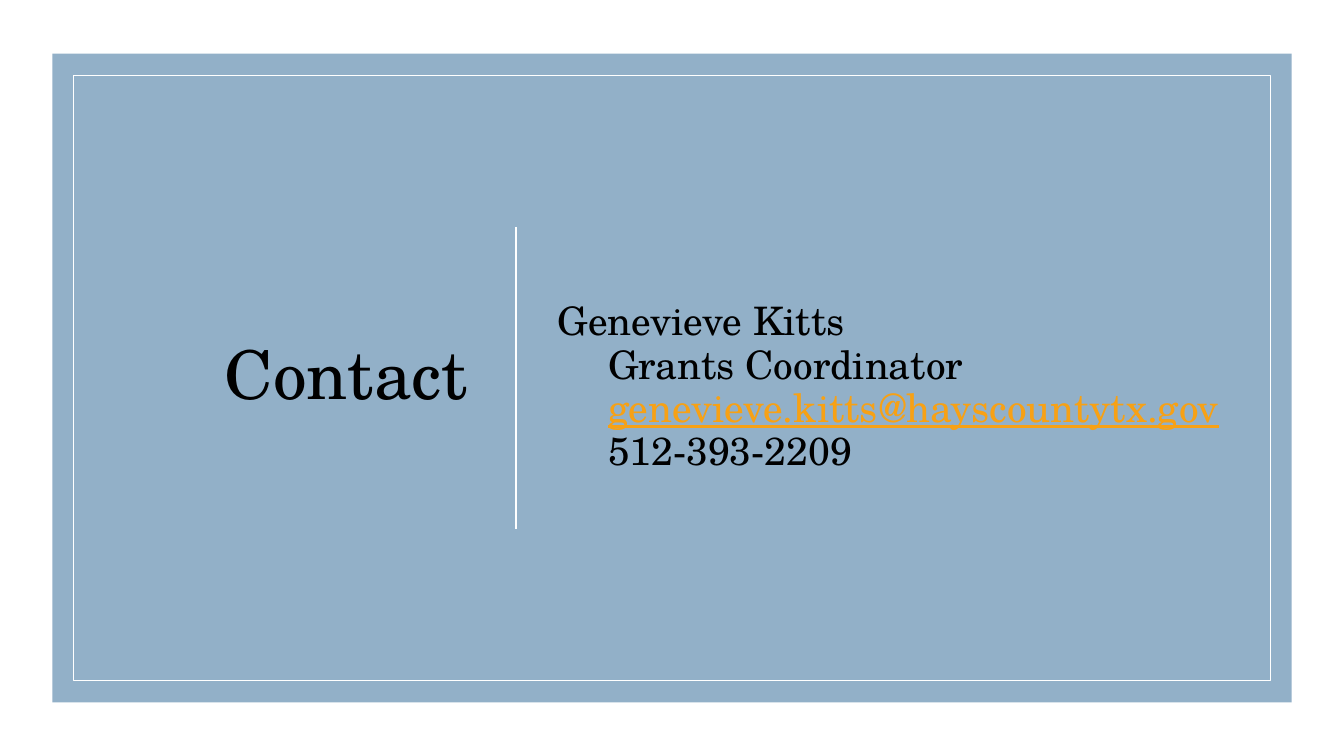
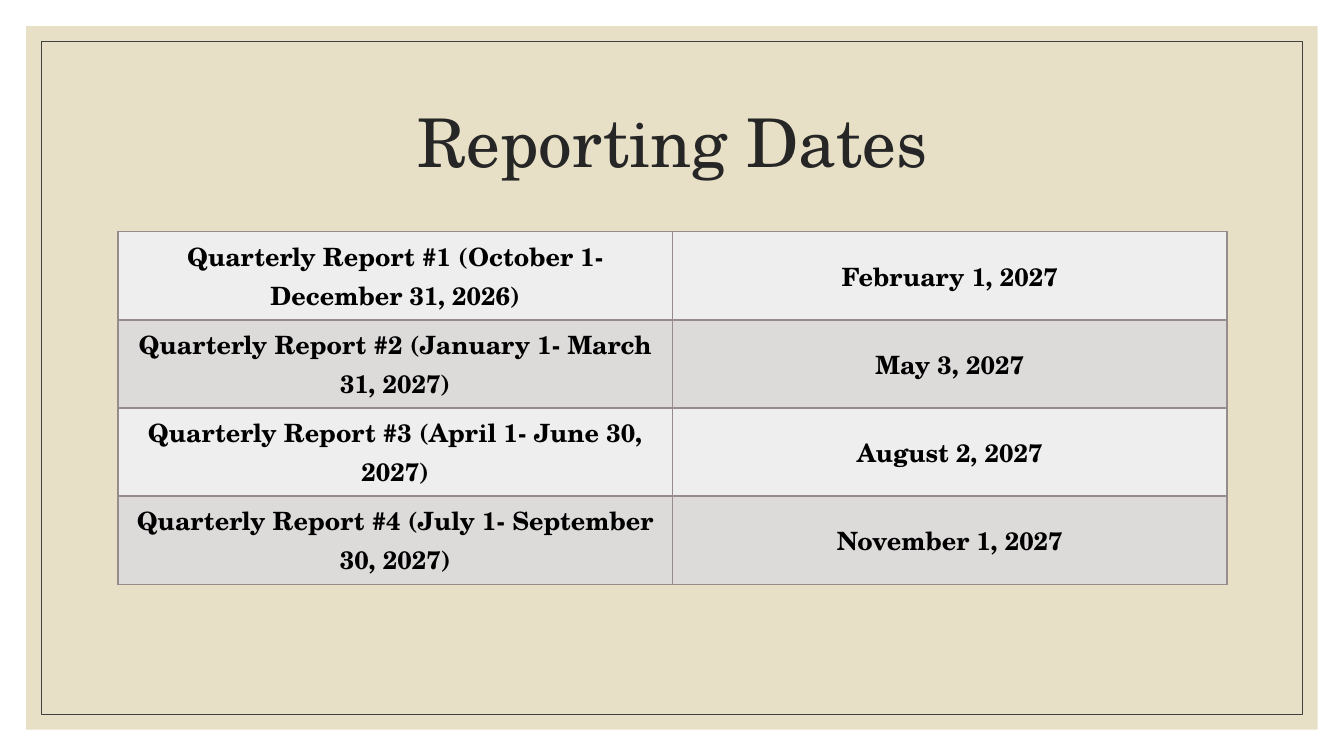
import pptx
import pptx.dml.color
import pptx.enum.shapes
import pptx.enum.text
import pptx.oxml.ns
import pptx.util
from lxml import etree

WIDTH, HEIGHT = 13.33, 7.5
FONT = "TeX Gyre Schola"
COLORS = {
    "white": "FFFFFF", "black": "000000", "blue": "92B0C8", "link": "F7A115",
    "sand": "E7E0C7", "rule": "404040", "heading": "262626",
    "light_row": "EFEEEE", "dark_row": "DDDADA", "grid": "968C8C",
}
ALIGN = pptx.enum.text.PP_ALIGN
MIDDLE = pptx.enum.text.MSO_ANCHOR.MIDDLE
SLIDE_BOX = (0, 0, WIDTH, HEIGHT)

CONTACT = [
    ("Genevieve Kitts", 0, {}),
    ("Grants Coordinator", 1, {}),
    ("genevieve.kitts@hayscountytx.gov", 1, {"color": "link", "underline": True}),
    ("512-393-2209", 1, {}),
]
REPORTS = [
    ("Quarterly Report #1 (October 1- December 31, 2026)", "February 1, 2027"),
    ("Quarterly Report #2 (January 1- March 31, 2027)", "May 3, 2027"),
    ("Quarterly Report #3 (April 1- June 30, 2027)", "August 2, 2027"),
    ("Quarterly Report #4 (July 1- September 30, 2027)", "November 1, 2027"),
]


def rgb(name):
    return pptx.dml.color.RGBColor.from_string(COLORS[name])


def share(box, x, y, w, h):
    """Part of a box, given in percent of its width and height."""
    left, top, width, height = box
    return (left + width * x / 100, top + height * y / 100,
            width * w / 100, height * h / 100)


def inset(box, x, y):
    return share(box, x, y, 100 - 2 * x, 100 - 2 * y)


def emu(box):
    return [pptx.util.Inches(length) for length in box]


def sub(parent, tag, **attributes):
    return etree.SubElement(parent, pptx.oxml.ns.qn(tag), attributes)


def write(paragraph, text, size, color="black", bold=False, underline=False,
          align=ALIGN.LEFT, spacing=None, before=0):
    paragraph.alignment = align
    paragraph.space_before = pptx.util.Pt(before)
    if spacing:
        paragraph.line_spacing = spacing
    run = paragraph.add_run()
    run.text = text
    run.font.name = FONT
    run.font.size = pptx.util.Pt(size)
    run.font.bold = bold
    run.font.underline = underline
    run.font.color.rgb = rgb(color)


def place(placeholder, box):
    placeholder.left, placeholder.top, placeholder.width, placeholder.height = emu(box)
    frame = placeholder.text_frame
    frame.word_wrap = True
    frame.auto_size = pptx.enum.text.MSO_AUTO_SIZE.NONE
    frame.vertical_anchor = MIDDLE
    return frame


def add_title(slide, box, text, color, align):
    frame = place(slide.shapes.title, box)
    write(frame.paragraphs[0], text, 48, color, align=align, spacing=0.9)


def add_backdrop(slide, panel_box, border_box, fill, line):
    """Filled panel with a thin border, both behind the placeholders."""
    for depth, box in enumerate((panel_box, border_box)):
        layer = slide.shapes.add_shape(
            pptx.enum.shapes.MSO_SHAPE.RECTANGLE, *emu(box))
        layer.shadow.inherit = False
        if box is panel_box:
            layer.fill.solid()
            layer.fill.fore_color.rgb = rgb(fill)
            layer.line.fill.background()
        else:
            layer.fill.background()
            layer.line.color.rgb = rgb(line)
            layer.line.width = pptx.util.Pt(0.5)
        slide.shapes._spTree.insert(2 + depth, layer._element)


def add_divider(slide, box):
    left, top, _, height = box
    divider = slide.shapes.add_connector(
        pptx.enum.shapes.MSO_CONNECTOR.STRAIGHT,
        *emu((left, top, left, top + height)))
    divider.line.color.rgb = rgb("white")
    divider.line.width = pptx.util.Pt(1.25)
    sub(divider._element.spPr, "a:effectLst")


def add_details(slide, box, details):
    frame = place(slide.placeholders[1], box)
    for index, (text, level, style) in enumerate(details):
        paragraph = frame.paragraphs[0] if index == 0 else frame.add_paragraph()
        paragraph.level = level
        properties = paragraph._p.get_or_add_pPr()
        properties.set("marL", str(pptx.util.Inches(0.5 * level)))
        properties.set("indent", "0")
        sub(properties, "a:buNone")
        write(paragraph, text, 28, spacing=0.8, before=4 if index else 0, **style)


def border_cell(cell):
    properties = cell._tc.get_or_add_tcPr()
    for position, side in enumerate(("a:lnL", "a:lnR", "a:lnT", "a:lnB")):
        edge = sub(properties, side, w=str(pptx.util.Pt(1)))
        sub(sub(edge, "a:solidFill"), "a:srgbClr", val=COLORS["grid"])
        properties.insert(position, edge)


def add_schedule(slide, box, reports):
    schedule = slide.shapes.add_table(len(reports), 2, *emu(box)).table
    schedule.first_row = schedule.horz_banding = False
    for row, report in enumerate(reports):
        for column, text in enumerate(report):
            cell = schedule.cell(row, column)
            cell.vertical_anchor = MIDDLE
            cell.fill.solid()
            cell.fill.fore_color.rgb = rgb("dark_row" if row % 2 else "light_row")
            border_cell(cell)
            write(cell.text_frame.paragraphs[0], text, 18, bold=True,
                  align=ALIGN.CENTER)


def build_contact(slide, box):
    add_backdrop(slide, inset(box, 3.9, 7.1), inset(box, 5.48, 10), "blue", "white")
    add_title(slide, share(box, 7.13, 14.53, 28.43, 70.8), "Contact", "black",
              ALIGN.RIGHT)
    add_divider(slide, share(box, 38.4, 30, 0, 40))
    add_details(slide, share(box, 40.74, 16.13, 50.94, 70.8), CONTACT)


def build_reporting(slide, box):
    add_backdrop(slide, inset(box, 1.95, 3.47), inset(box, 3.08, 5.47),
                 "sand", "rule")
    add_title(slide, share(box, 8.78, 9.33, 82.52, 20), "Reporting Dates",
              "heading", ALIGN.CENTER)
    add_schedule(slide, share(box, 8.78, 30.67, 82.52, 46.6), REPORTS)


def main():
    deck = pptx.Presentation()
    deck.slide_width, deck.slide_height = emu((WIDTH, HEIGHT))
    # Layout 1 holds a title and a body, layout 5 a title only
    for layout, build in ((1, build_contact), (5, build_reporting)):
        build(deck.slides.add_slide(deck.slide_layouts[layout]), SLIDE_BOX)
    deck.save("out.pptx")


if __name__ == "__main__":
    main()
